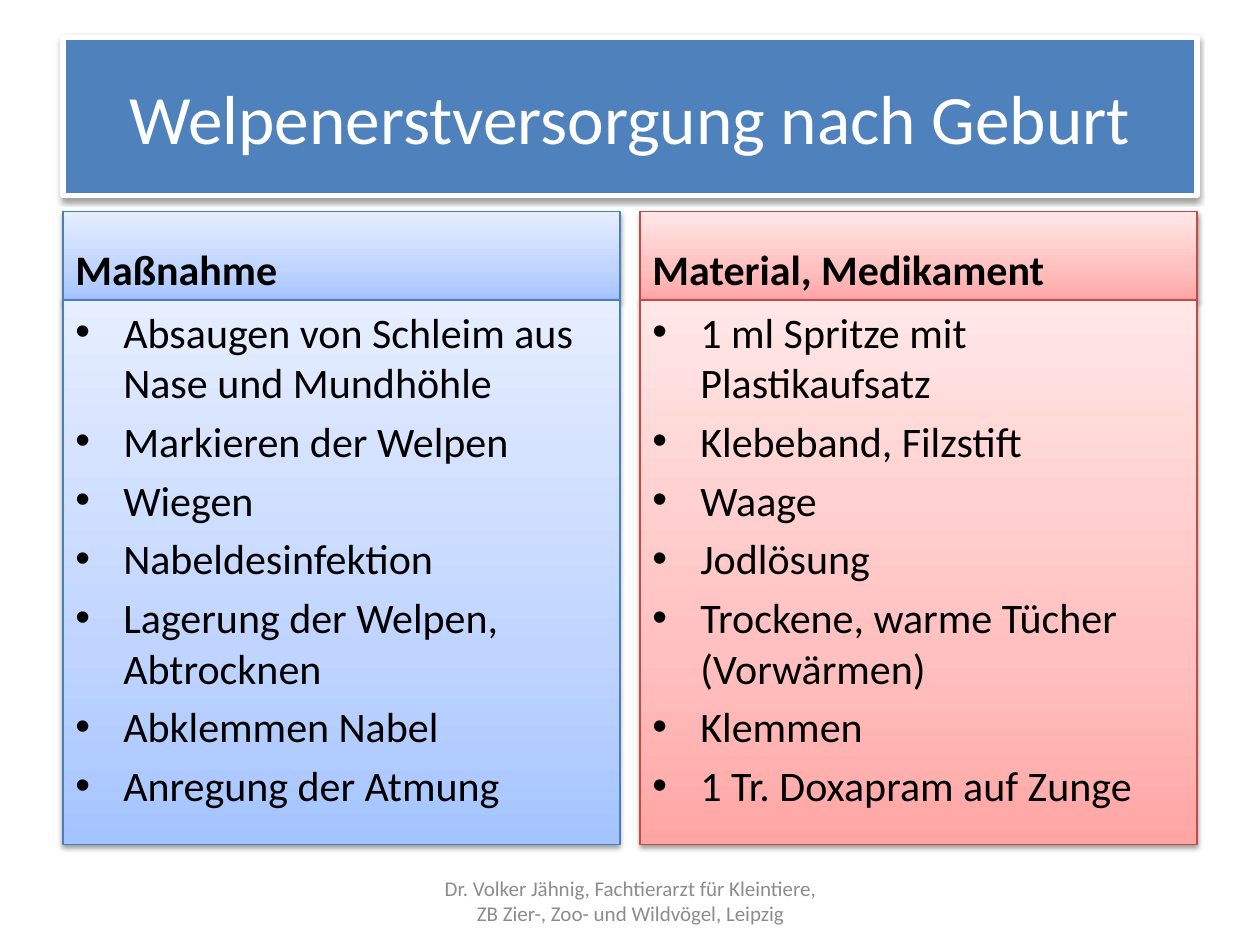
"""Build a slide on first care for newborn puppies."""
from pptx import Presentation, oxml, util as u
from pptx.dml.color import RGBColor
from pptx.enum import shapes, text

NS = 'xmlns:a="http://schemas.openxmlformats.org/drawingml/2006/main"'
FONT = "Calibri"
TITLE = "Welpenerstversorgung nach Geburt"
FOOTER = ("Dr. Volker Jähnig, Fachtierarzt für Kleintiere, "
          "ZB Zier-, Zoo- und Wildvögel, Leipzig")
COLUMNS = [
    {"heading": "Maßnahme",
     "items": ["Absaugen von Schleim aus Nase und Mundhöhle",
               "Markieren der Welpen", "Wiegen", "Nabeldesinfektion",
               "Lagerung der Welpen, Abtrocknen", "Abklemmen Nabel",
               "Anregung der Atmung"],
     "stops": [(0, "A4C4FF"), (35, "BFD4FF"), (100, "E6EEFF")],
     "line": "4B7EBC"},
    {"heading": "Material, Medikament",
     "items": ["1 ml Spritze mit Plastikaufsatz", "Klebeband, Filzstift",
               "Waage", "Jodlösung", "Trockene, warme Tücher (Vorwärmen)",
               "Klemmen", "1 Tr. Doxapram auf Zunge"],
     "stops": [(0, "FFA6A5"), (35, "FFC0BF"), (100, "FFE7E7")],
     "line": "BF4C48"},
]
MARGIN, WIDTH, GAP = 0.5, 9, 0.16
COLUMN_WIDTH = (WIDTH - GAP) / 2
HEADING_TOP, HEADING_HEIGHT, LIST_HEIGHT = 1.68, 0.7, 4.32


def color(value):
    return RGBColor.from_string(value)


def xml(markup):
    return oxml.parse_xml(markup.replace(">", f" {NS}>", 1))


def write(box, lines, size=24, ink="000000", bold=False, before=0, bullet=False,
          align=text.PP_ALIGN.LEFT, anchor=text.MSO_ANCHOR.TOP):
    frame = box.text_frame
    frame.word_wrap = True
    frame.vertical_anchor = anchor
    for index, line in enumerate(lines):
        para = frame.paragraphs[0] if index == 0 else frame.add_paragraph()
        para.alignment = align
        para.space_before = u.Pt(before)
        if bullet:
            props = para._p.get_or_add_pPr()
            props.set("marL", str(u.Inches(0.38)))
            props.set("indent", str(u.Inches(-0.38)))
            props.append(xml('<a:buFont typeface="Arial"></a:buFont>'))
            props.append(xml('<a:buChar char="•"></a:buChar>'))
        span = para.add_run()
        span.text = line
        span.font.name, span.font.size, span.font.bold = FONT, u.Pt(size), bold
        span.font.color.rgb = color(ink)


def add_panel(page, place, line, line_width, fill=None, stops=()):
    box = page.shapes.add_shape(shapes.MSO_SHAPE.RECTANGLE, *map(u.Inches, place))
    if fill:
        box.fill.solid()
        box.fill.fore_color.rgb = color(fill)
    else:
        marks = "".join(f'<a:gs pos="{pos * 1000}"><a:srgbClr val="{tone}"/></a:gs>'
                        for pos, tone in stops)
        box._element.spPr.insert(2, xml(
            f'<a:gradFill rotWithShape="1"><a:gsLst>{marks}</a:gsLst>'
            '<a:lin ang="16200000" scaled="0"/></a:gradFill>'))
    box.line.color.rgb = color(line)
    box.line.width = u.Pt(line_width)
    box.shadow.inherit = False
    box._element.spPr.find(oxml.ns.qn("a:effectLst")).append(xml(
        f'<a:outerShdw blurRad="{u.Pt(3.1)}" dist="{u.Pt(1.6)}" dir="5400000" '
        'rotWithShape="0"><a:srgbClr val="000000"><a:alpha val="38000"/>'
        '</a:srgbClr></a:outerShdw>'))
    return box


def main():
    deck = Presentation()
    deck.slide_width, deck.slide_height = u.Inches(10), u.Inches(7.5)
    page = deck.slides.add_slide(deck.slide_layouts[6])

    title = add_panel(page, (MARGIN, 0.3, WIDTH, 1.25), "FFFFFF", 3, fill="4F81BD")
    write(title, [TITLE], size=39.6, ink="FFFFFF",
          align=text.PP_ALIGN.CENTER, anchor=text.MSO_ANCHOR.MIDDLE)

    for index, column in enumerate(COLUMNS):
        left = MARGIN + index * (COLUMN_WIDTH + GAP)
        look = {"line": column["line"], "line_width": 0.75, "stops": column["stops"]}
        heading = add_panel(
            page, (left, HEADING_TOP, COLUMN_WIDTH, HEADING_HEIGHT), **look)
        write(heading, [column["heading"]], bold=True, before=4.8,
              anchor=text.MSO_ANCHOR.BOTTOM)
        listing = add_panel(
            page, (left, HEADING_TOP + HEADING_HEIGHT, COLUMN_WIDTH, LIST_HEIGHT), **look)
        write(listing, column["items"], before=4.8, bullet=True)

    footer = page.shapes.add_textbox(*map(u.Inches, (3.42, 6.95, 3.17, 0.4)))
    write(footer, [FOOTER], size=12, ink="8C8C8C",
          align=text.PP_ALIGN.CENTER, anchor=text.MSO_ANCHOR.MIDDLE)
    deck.save("out.pptx")


if __name__ == "__main__":
    main()
